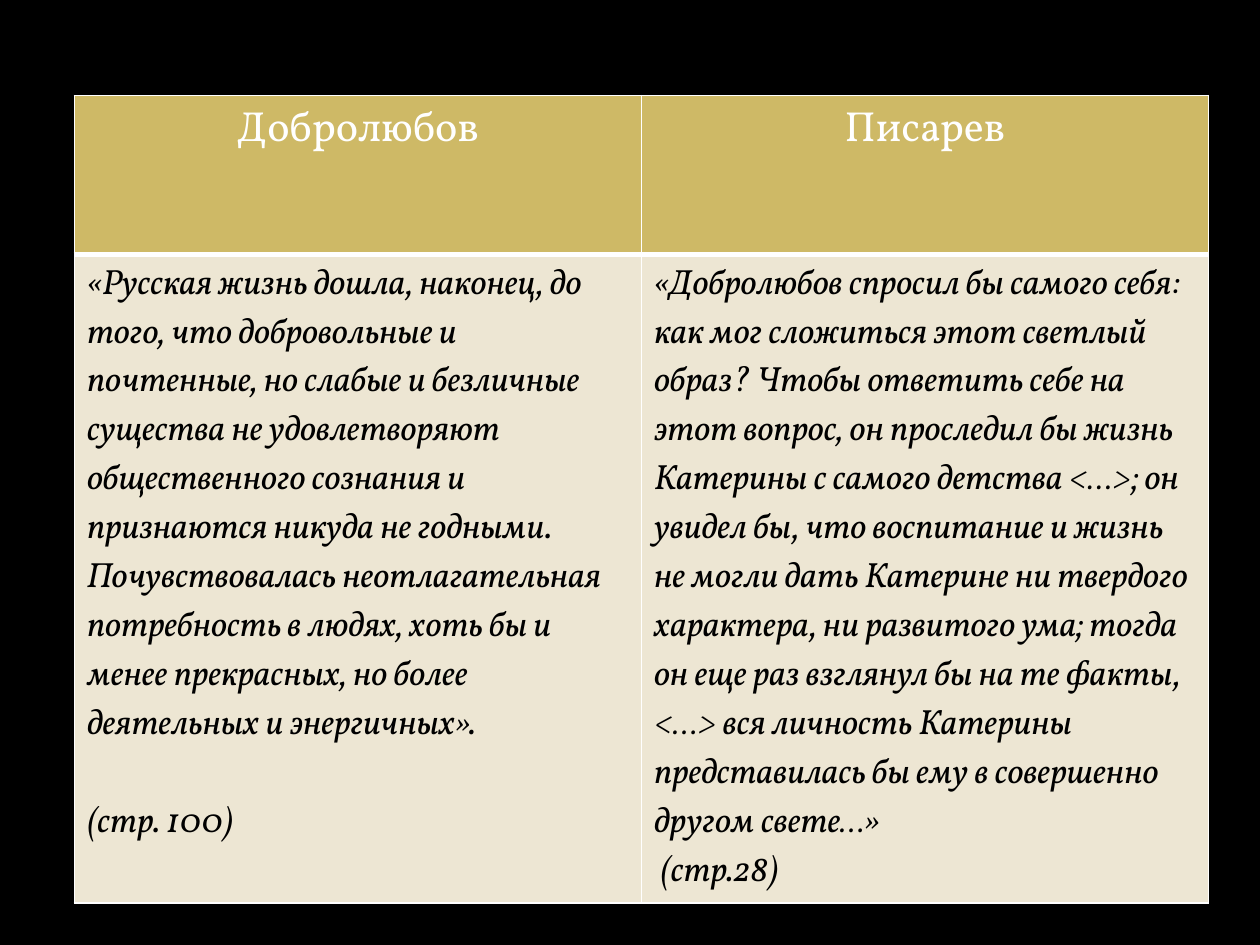
"""Build a slide with a table that compares quotations from two critics."""
from pptx import Presentation
from pptx.dml.color import RGBColor
from pptx.enum.text import PP_ALIGN
from pptx.oxml import parse_xml
from pptx.oxml.ns import nsdecls
from pptx.util import Cm, Pt


def paint(fill, tint):
    fill.solid()
    fill.fore_color.rgb = RGBColor.from_string(tint)


def edge(cell, low):
    props = cell._tc.get_or_add_tcPr()
    for spot, (side, wide) in enumerate((("L", 1), ("R", 1), ("T", 1), ("B", low))):
        props.insert(spot, parse_xml(
            f'<a:ln{side} {nsdecls("a")} w="{Pt(wide)}"><a:solidFill>'
            f'<a:srgbClr val="FFFFFF"/></a:solidFill></a:ln{side}>'))


heads = ["Добролюбов", "Писарев"]
quotes = [
    "«Русская жизнь дошла, наконец, до того, что добровольные и почтенные, "
    "но слабые и безличные существа не удовлетворяют общественного сознания "
    "и признаются никуда не годными. Почувствовалась неотлагательная "
    "потребность в людях, хоть бы и менее прекрасных, но более деятельных "
    "и энергичных».\n(стр. 100)",
    "«Добролюбов спросил бы самого себя: как мог сложиться этот светлый образ? "
    "Чтобы ответить себе на этот вопрос, он проследил бы жизнь Катерины с самого "
    "детства <…>; он увидел бы, что воспитание и жизнь не могли дать Катерине "
    "ни твердого характера, ни развитого ума; тогда он еще раз взглянул бы на те "
    "факты, <…> вся личность Катерины представилась бы ему в совершенно другом "
    "свете…»\n (стр.28)",
]
rows = [
    (heads, Cm(3.2), "CEB966", "FFFFFF", 24, False, PP_ALIGN.CENTER, 3),
    (quotes, Cm(11.3), "EDE6D3", "000000", 20, True, PP_ALIGN.LEFT, 1),
]

deck = Presentation()
deck.slide_width, deck.slide_height = Cm(25.4), Cm(19.05)
slide = deck.slides.add_slide(deck.slide_layouts[6])
paint(slide.background.fill, "000000")

frame = slide.shapes.add_table(2, 2, Cm(1.5), Cm(1.93), Cm(22.86), Cm(14.5))
table = frame.table
table.first_row = table.horz_banding = False

for row, (texts, high, back, ink, size, slant, align, low) in enumerate(rows):
    table.rows[row].height = high
    for col, text in enumerate(texts):
        cell = table.cell(row, col)
        cell.text_frame.text = text
        paint(cell.fill, back)
        edge(cell, low)
        for para in cell.text_frame.paragraphs:
            para.alignment = align
            for run in para.runs:
                font = run.font
                font.name, font.size = "Vollkorn", Pt(size)
                font.bold, font.italic = False, slant
                paint(font.fill, ink)

table.cell(1, 0).text_frame.paragraphs[1].space_before = Pt(28)

deck.save("out.pptx")
